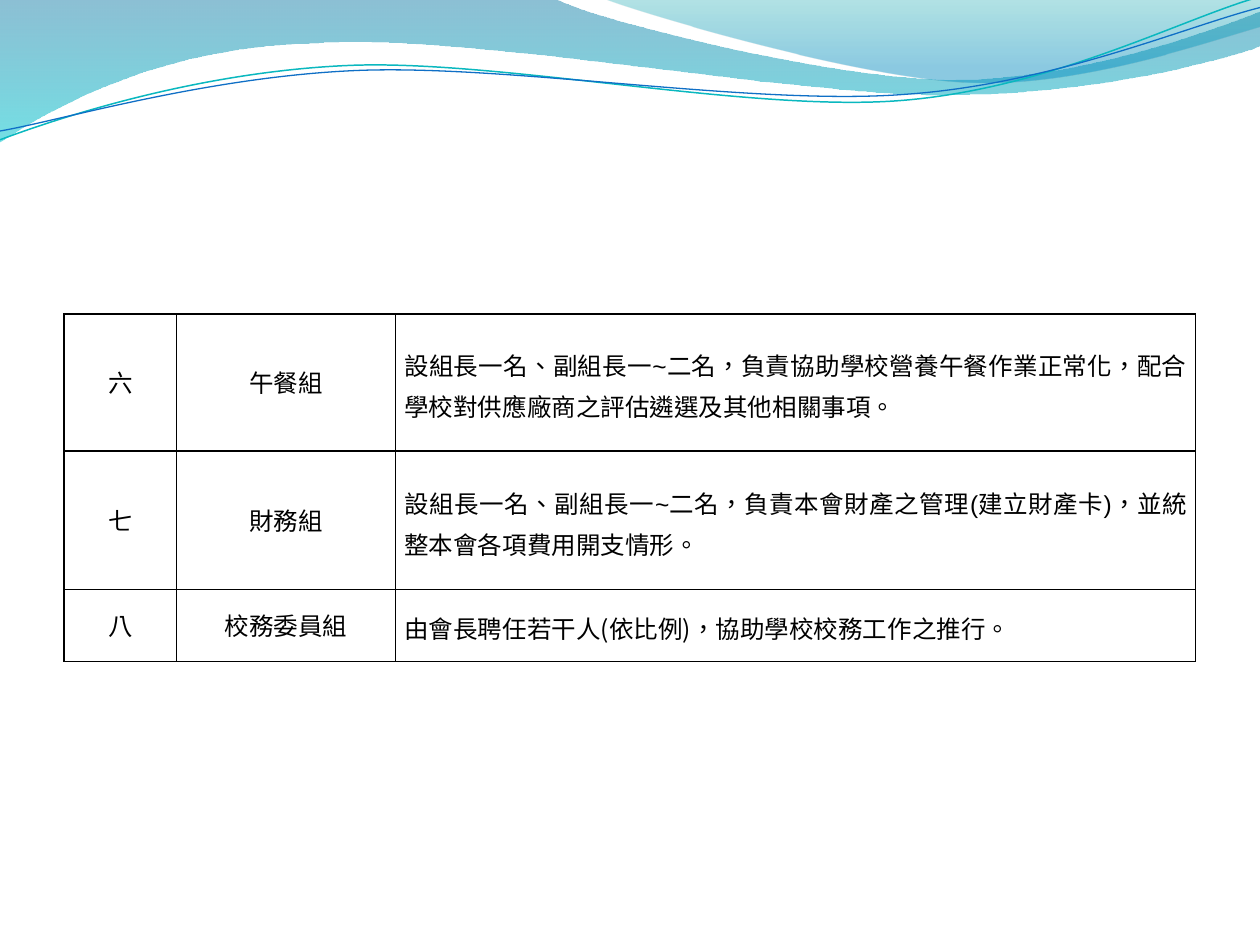
from lxml import etree
from pptx import Presentation
from pptx.dml.color import RGBColor
from pptx.enum.lang import MSO_LANGUAGE_ID
from pptx.enum.text import MSO_ANCHOR, PP_ALIGN
from pptx.oxml.ns import qn
from pptx.util import Inches, Pt

COLORS = {
    "text": "000000", "border": "000000",
    "wave_top": "0074A1", "wave_bottom": "00C6CF",
    "crest_top": "00A1A9", "crest_bottom": "008BBF",
    "teal_line": "0AB8BF", "blue_line": "0F6FC6",
}
LATIN_FONT = "Arial"
CJK_FONT = "Noto Sans CJK TC"

# Outlines in inches: a start point, then lines (one point) or Bezier curves (three points)
WAVE = [(0, 0), (4.4, -0.01), (4.76, 0.17, 6.64, 0.63, 7.58, 0.63),
        (8.53, 0.63, 9.58, 0.26, 10, 0.09), (10.01, 0.36),
        (9.83, 0.44, 8.7, 0.76, 7.46, 0.75), (6.22, 0.75, 3.82, 0.28, 2.57, 0.34),
        (1.29, 0.36, 0.46, 0.83, -0.01, 1.13)]
CREST = [(4.79, -0.01), (5.09, 0.11, 6.82, 0.62, 7.69, 0.65),
         (8.56, 0.69, 9.61, 0.32, 10, 0.21), (10, 0)]
TEAL_LINE = [(0, 1.11), (0.48, 0.93, 1.58, 0.57, 2.77, 0.52),
             (3.95, 0.47, 5.93, 0.89, 7.13, 0.8), (8.33, 0.71, 9.38, 0.15, 9.98, -0.02)]
BLUE_LINE = [(0, 1.04), (0.47, 0.96, 1.64, 0.61, 2.83, 0.56),
             (4.03, 0.51, 5.97, 0.84, 7.17, 0.75), (8.36, 0.67, 9.41, 0.21, 10, 0.06)]

# Each description is a list of runs; brackets standing alone use the CJK font
GROUPS = [
    ("六", "午餐組", ["設組長一名、副組長一~二名，負責協助學校營養午餐作業正常化，"
                  "配合學校對供應廠商之評估遴選及其他相關事項。"]),
    ("七", "財務組", ["設組長一名、副組長一~二名，負責本會財產之管理(建立財產卡)，"
                  "並統整本會各項費用開支情形。"]),
    ("八", "校務委員組", ["由會長聘任若干人", "(", "依比例", ")", "，協助學校校務工作之推行。"]),
]


def rgb(name):
    return RGBColor.from_string(COLORS[name])


def add_outline(slide, left, top, outline, close):
    """Draw a freeform through the end points, then bend its curved segments."""
    ends = [(left + Inches(segment[-2]), top + Inches(segment[-1])) for segment in outline]
    builder = slide.shapes.build_freeform(*ends[0], scale=1.0)
    builder.add_line_segments(ends[1:], close=close)
    shape = builder.convert_to_shape()
    shape.shadow.inherit = False
    lines = list(shape.element.spPr.iter(qn("a:lnTo")))
    for line, segment in zip(lines, outline[1:]):
        if len(segment) == 2:
            continue
        curve = etree.Element(qn("a:cubicBezTo"))
        for x, y in zip(segment[::2], segment[1::2]):
            etree.SubElement(curve, qn("a:pt"), x=str(left + Inches(x) - shape.left),
                             y=str(top + Inches(y) - shape.top))
        line.getparent().replace(line, curve)
    return shape


def add_gradient_area(slide, left, top, outline, stops):
    shape = add_outline(slide, left, top, outline, close=True)
    shape.line.fill.background()
    shape.fill.gradient()
    shape.fill.gradient_angle = 270
    for stop, (position, color, _) in zip(shape.fill.gradient_stops, stops):
        stop.position = position
        stop.color.rgb = rgb(color)
    colors = shape.element.spPr.find(qn("a:gradFill")).iter(qn("a:srgbClr"))
    for color_element, (_, _, opacity) in zip(colors, stops):
        etree.SubElement(color_element, qn("a:alpha"), val=str(opacity * 1000))


def add_header_waves(slide, left, top):
    # Shaded areas
    add_gradient_area(slide, left, top, WAVE,
                      [(0, "wave_top", 45), (1, "wave_bottom", 55)])
    add_gradient_area(slide, left, top, CREST,
                      [(0, "crest_top", 30), (0.8, "crest_bottom", 45)])
    # Thin lines
    for outline, color, width in [(TEAL_LINE, "teal_line", 0.85),
                                  (BLUE_LINE, "blue_line", 0.75)]:
        shape = add_outline(slide, left, top, outline, close=False)
        shape.fill.background()
        shape.line.color.rgb = rgb(color)
        shape.line.width = Pt(width)


def set_borders(cell):
    properties = cell._tc.get_or_add_tcPr()
    for index, side in enumerate(("a:lnL", "a:lnR", "a:lnT", "a:lnB")):
        line = etree.Element(qn(side), w=str(Pt(1)))
        fill = etree.SubElement(line, qn("a:solidFill"))
        etree.SubElement(fill, qn("a:srgbClr"), val=COLORS["border"])
        properties.insert(index, line)


def fill_cell(cell, runs, is_description):
    cell.margin_left = cell.margin_right = Inches(0.07)
    cell.margin_top = cell.margin_bottom = 0
    cell.vertical_anchor = MSO_ANCHOR.MIDDLE
    cell.fill.background()
    set_borders(cell)
    paragraph = cell.text_frame.paragraphs[0]
    if is_description:
        paragraph.alignment = PP_ALIGN.JUSTIFY
        paragraph.line_spacing = 1.15
    else:
        paragraph.alignment = PP_ALIGN.CENTER
        paragraph.line_spacing = Pt(20)
        paragraph.space_before = Pt(12)
        paragraph.space_after = Pt(6)
    for text in runs:
        run = paragraph.add_run()
        run.text = text
        run.font.size = Pt(14)
        run.font.name = CJK_FONT if text in ("(", ")") else LATIN_FONT
        run.font.color.rgb = rgb("text")
        run.font.language_id = MSO_LANGUAGE_ID.TRADITIONAL_CHINESE
        east_asian = etree.Element(qn("a:ea"), typeface=CJK_FONT)
        run.font._element.find(qn("a:latin")).addnext(east_asian)


def add_group_table(slide, left, top, width, height):
    frame = slide.shapes.add_table(len(GROUPS), 3, left, top, width, height)
    table = frame.table
    table.first_row = table.horz_banding = False
    for column, column_width in zip(table.columns, (0.89, 1.74, 6.35)):
        column.width = Inches(column_width)
    for row, row_height in zip(table.rows, (1.09, 1.1, 0.57)):
        row.height = Inches(row_height)
    for row, (number, name, description) in zip(table.rows, GROUPS):
        for cell, runs in zip(row.cells, ([number], [name], description)):
            fill_cell(cell, runs, is_description=runs is description)


def main():
    presentation = Presentation()
    presentation.slide_width = Inches(10)
    presentation.slide_height = Inches(7.5)
    slide = presentation.slides.add_slide(presentation.slide_layouts[6])
    add_header_waves(slide, Inches(0), Inches(0))
    add_group_table(slide, Inches(0.51), Inches(2.49), Inches(8.98), Inches(2.76))
    presentation.save("out.pptx")


if __name__ == "__main__":
    main()
